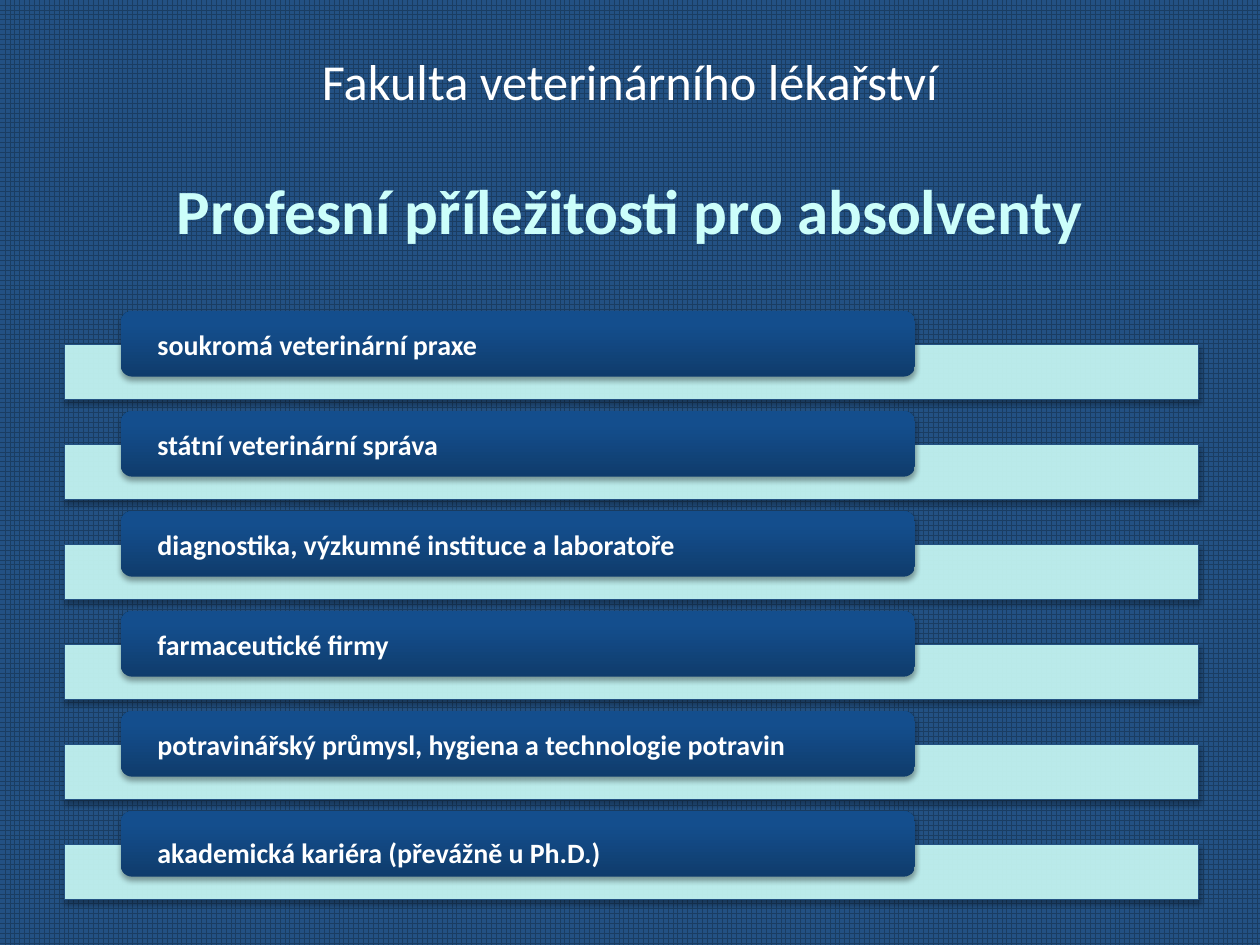
from copy import deepcopy

from lxml.etree import SubElement
from pptx import Presentation
from pptx.dml.color import RGBColor
from pptx.enum.dml import MSO_PATTERN
from pptx.enum.shapes import MSO_SHAPE as Shape
from pptx.enum.text import MSO_ANCHOR as Anchor, MSO_AUTO_SIZE as AutoSize, PP_ALIGN as Align
from pptx.oxml.ns import qn
from pptx.util import Pt

COLORS = {
    "grid": "1A3D62", "background": "235183", "white": "FFFFFF", "mint": "CCFEFA",
    "card_dark": "0F3C6C", "card_mid": "144E8D", "card_light": "124E90", "shadow": "000000",
}
CAREERS = [
    "soukromá veterinární praxe",
    "státní veterinární správa",
    "diagnostika, výzkumné instituce a laboratoře",
    "farmaceutické firmy",
    "potravinářský průmysl, hygiena a technologie potravin",
    "akademická kariéra (převážně u Ph.D.)",
]
ROW_TOP, ROW_PITCH, BAR_DROP = 177.8, 57.15, 19


def rgb(name):
    return RGBColor.from_string(COLORS[name])


def write(paragraph, text, size, color="white", bold=False, align=Align.LEFT,
          font="Calibri", before=0, spacing=1.0):
    paragraph.alignment = align
    paragraph.space_before = Pt(before)
    paragraph.line_spacing = spacing
    run = paragraph.add_run()
    run.text = text
    run.font.name, run.font.size, run.font.bold = font, Pt(size), bold
    run.font.color.rgb = rgb(color)


class CareerSlide:
    def __init__(self, presentation):
        self.slide = presentation.slides.add_slide(presentation.slide_layouts[5])
        fill = self.slide.background.fill
        fill.patterned()
        fill.pattern = MSO_PATTERN.LARGE_GRID
        fill.fore_color.rgb = rgb("grid")
        fill.back_color.rgb = rgb("background")

    def title(self, faculty, heading):
        title = self.slide.shapes.title
        title.left, title.top, title.width, title.height = Pt(36), Pt(21.6), Pt(648), Pt(90)
        frame = title.text_frame
        frame.auto_size, frame.vertical_anchor = AutoSize.NONE, Anchor.TOP
        frame.margin_top, frame.margin_bottom = Pt(7), 0
        write(frame.paragraphs[0], faculty, 28.8, align=Align.CENTER)
        write(frame.add_paragraph(), heading, 36, "mint", True, Align.CENTER, before=34.6)

    def block(self, kind, left, top, width, height):
        """Add a preset shape with the soft shadow shared by bars and cards."""
        shape = self.slide.shapes.add_shape(kind, Pt(left), Pt(top), Pt(width), Pt(height))
        shape.shadow.inherit = False
        effects = shape.element.spPr.find(qn("a:effectLst"))
        shadow = SubElement(effects, qn("a:outerShdw"), blurRad=str(Pt(3.1)),
                            dist=str(Pt(1.8)), dir="5400000", rotWithShape="0")
        color = SubElement(shadow, qn("a:srgbClr"), val=COLORS["shadow"])
        SubElement(color, qn("a:alpha"), val="35000")
        return shape

    def bar(self, top):
        bar = self.block(Shape.RECTANGLE, 37, top, 648, 31.4)
        bar.fill.solid()
        bar.fill.fore_color.rgb = rgb("mint")
        color = bar.element.spPr.find(qn("a:solidFill")).find(qn("a:srgbClr"))
        SubElement(color, qn("a:alpha"), val="90000")
        bar.line.color.rgb = rgb("background")
        bar.line.width = Pt(0.75)

    def card(self, text, top, spacing=1.0):
        card = self.block(Shape.ROUNDED_RECTANGLE, 69.2, top, 453.6, 37.4)
        card.line.fill.background()
        # Three-stop gradient, darkest at the bottom
        card.fill.gradient()
        card.fill.gradient_angle = 90
        stop_list = card.element.spPr.find(qn("a:gradFill")).find(qn("a:gsLst"))
        stop_list.append(deepcopy(stop_list[0]))
        stops = [("card_dark", 0), ("card_mid", 0.8), ("card_light", 1)]
        for stop, (color, position) in zip(card.fill.gradient_stops, stops):
            stop.color.rgb, stop.position = rgb(color), position
        frame = card.text_frame
        frame.word_wrap, frame.vertical_anchor = True, Anchor.MIDDLE
        frame.margin_left = frame.margin_right = Pt(19)
        frame.margin_top = frame.margin_bottom = 0
        write(frame.paragraphs[0], text, 16, bold=True, spacing=spacing)


def main():
    presentation = Presentation()
    presentation.slide_width, presentation.slide_height = Pt(720), Pt(540)
    page = CareerSlide(presentation)
    page.title("Fakulta veterinárního lékařství", "Profesní příležitosti pro absolventy")

    # One bar with a card on it per career; the last line is set looser
    for index, career in enumerate(CAREERS):
        top = ROW_TOP + index * ROW_PITCH
        page.bar(top + BAR_DROP)
        page.card(career, top, 1.5 if career == CAREERS[-1] else 1.0)

    presentation.save("out.pptx")


if __name__ == "__main__":
    main()
